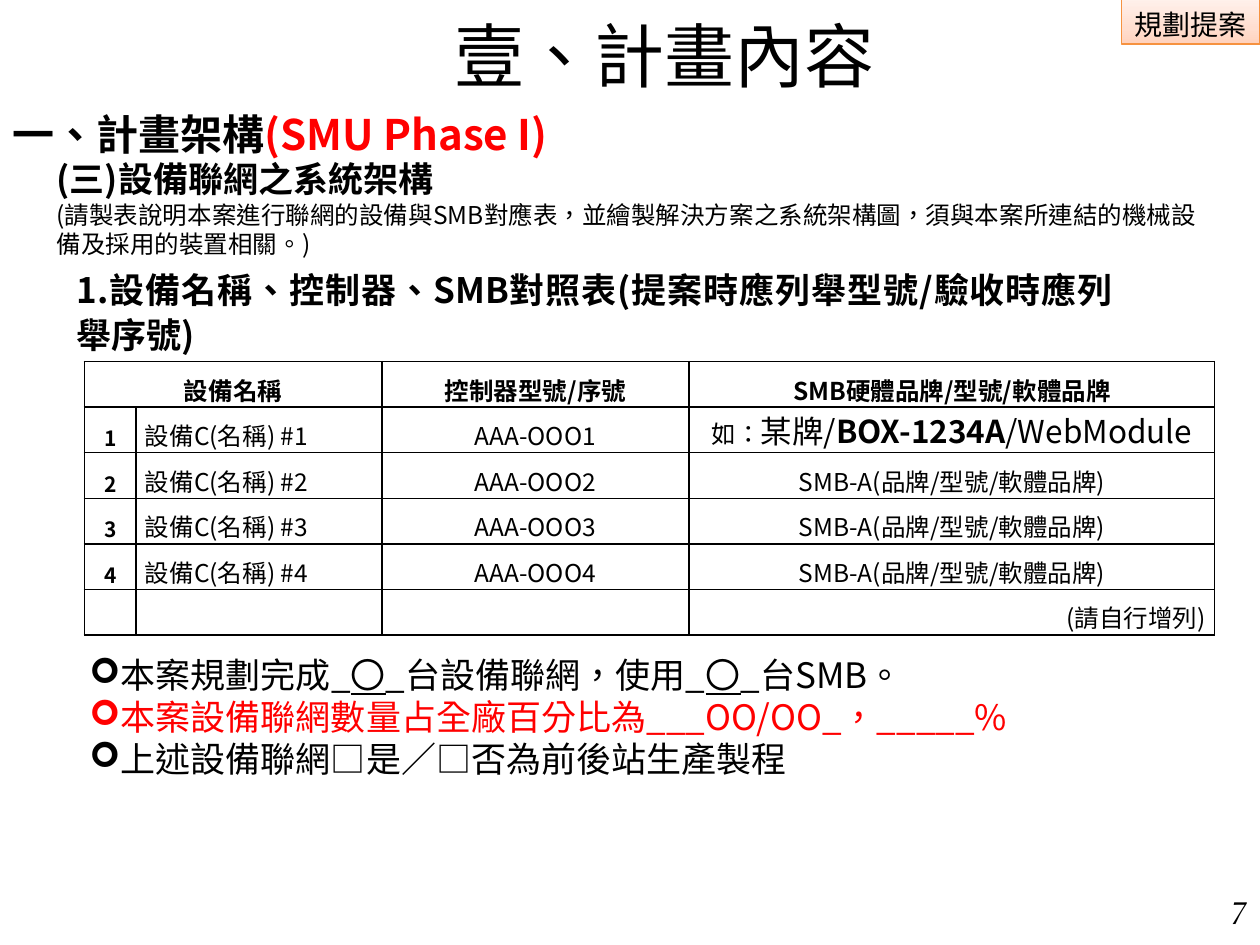
from copy import deepcopy
from dataclasses import dataclass
from typing import Optional

from lxml import etree
from pptx import Presentation
from pptx import util as u
from pptx.dml.color import RGBColor
from pptx.enum import shapes, text
from pptx.oxml.ns import qn

COLORS = {
    "ink": "000000",
    "alert": "FF0000",
    "tag_line": "F69240",
    "tag_dark": "FFD2BD",
    "tag_middle": "FFDED0",
    "tag_light": "FFF2ED",
}
SANS = "Noto Sans CJK SC"
SERIF = "TeX Gyre Pagella"
LEADING = 1.2
TABLE_LEADING = 26
LEFT, CENTER, RIGHT, JUSTIFY = (
    text.PP_ALIGN.LEFT, text.PP_ALIGN.CENTER, text.PP_ALIGN.RIGHT, text.PP_ALIGN.JUSTIFY)


@dataclass
class Run:
    words: str
    size: float = 14
    bold: bool = False
    color: str = "ink"
    underline: bool = False
    italic: bool = False
    font: str = SANS


@dataclass
class Line:
    runs: list[Run]
    align: text.PP_ALIGN = LEFT
    leading: Optional[float] = None
    bullet: Optional[str] = None
    indent: float = 0


@dataclass
class Box:
    left: float
    top: float
    width: float
    height: float
    lines: list[Line]


def rgb(name: str) -> RGBColor:
    return RGBColor.from_string(COLORS[name])


def add_run(paragraph, item: Run) -> None:
    run = paragraph.add_run()
    run.text = item.words
    font = run.font
    font.size = u.Pt(item.size)
    font.bold = item.bold
    font.italic = item.italic
    font.underline = item.underline
    font.color.rgb = rgb(item.color)
    font.name = item.font
    properties = run._r.get_or_add_rPr()
    properties.set("lang", "zh-TW")
    properties.find(qn("a:latin")).addnext(
        etree.Element(qn("a:ea"), typeface=item.font))


def write(frame, lines: list[Line]) -> None:
    for index, line in enumerate(lines):
        paragraph = frame.paragraphs[0] if index == 0 else frame.add_paragraph()
        properties = paragraph._p.get_or_add_pPr()
        properties.set("marL", str(u.Inches(line.indent)))
        properties.set("indent", "0")
        if line.bullet:
            etree.SubElement(properties, qn("a:buFont"), typeface="Wingdings")
            etree.SubElement(properties, qn("a:buChar"), char=line.bullet)
        paragraph.alignment = line.align
        paragraph.space_before = u.Pt(0)
        size = max((run.size for run in line.runs), default=14)
        paragraph.line_spacing = u.Pt(line.leading or round(size * LEADING, 1))
        for run in line.runs:
            add_run(paragraph, run)


def fill_box(shape, box: Box, anchor=text.MSO_ANCHOR.TOP, inset: float = 0.08) -> None:
    shape.left, shape.top = u.Inches(box.left), u.Inches(box.top)
    shape.width, shape.height = u.Inches(box.width), u.Inches(box.height)
    frame = shape.text_frame
    frame.word_wrap = True
    frame.auto_size = text.MSO_AUTO_SIZE.NONE
    frame.vertical_anchor = anchor
    frame.margin_left = frame.margin_right = u.Inches(0.1)
    frame.margin_top, frame.margin_bottom = u.Inches(inset), u.Inches(0.05)
    write(frame, box.lines)


def add_text(slide, box: Box, **options) -> None:
    fill_box(slide.shapes.add_textbox(0, 0, 0, 0), box, **options)


def add_tag(slide, box: Box) -> None:
    tag = slide.shapes.add_shape(shapes.MSO_SHAPE.RECTANGLE, 0, 0, 0, 0)
    fill_box(tag, box)
    tag.text_frame.word_wrap = False
    tag.shadow.inherit = False
    tag.line.color.rgb = rgb("tag_line")
    tag.line.width = u.Pt(0.75)
    tag.fill.gradient()
    tag.fill.gradient_angle = 90
    first_stop = tag._element.spPr.find(".//" + qn("a:gs"))
    first_stop.addnext(deepcopy(first_stop))
    shades = [(0, "tag_dark"), (0.35, "tag_middle"), (1, "tag_light")]
    for stop, (position, color) in zip(tag.fill.gradient_stops, shades):
        stop.position = position
        stop.color.rgb = rgb(color)


def set_borders(cell) -> None:
    properties = cell._tc.get_or_add_tcPr()
    for index, side in enumerate(("lnL", "lnR", "lnT", "lnB")):
        border = etree.Element(qn(f"a:{side}"), w=str(u.Pt(1)))
        solid = etree.SubElement(border, qn("a:solidFill"))
        etree.SubElement(solid, qn("a:srgbClr"), val=COLORS["ink"])
        properties.insert(index, border)


def add_equipment_table(slide, rows: list[list[Line]]) -> None:
    widths = [0.41, 1.95, 2.44, 4.17]
    row_height = u.Pt(TABLE_LEADING)
    table = slide.shapes.add_table(
        len(rows), len(widths), u.Inches(0.67), u.Inches(2.87),
        u.Inches(sum(widths)), row_height * len(rows)).table
    table.first_row = table.horz_banding = False
    for column, width in zip(table.columns, widths):
        column.width = u.Inches(width)
    for row, lines in zip(table.rows, rows):
        row.height = row_height
        for cell, line in zip(row.cells, lines):
            cell.margin_left = cell.margin_right = u.Inches(0.07)
            cell.margin_top = cell.margin_bottom = 0
            cell.vertical_anchor = text.MSO_ANCHOR.MIDDLE
            cell.fill.background()
            set_borders(cell)
            line.leading = TABLE_LEADING
            write(cell.text_frame, [line])
    table.cell(0, 0).merge(table.cell(0, 1))


def equipment_rows() -> list[list[Line]]:
    header = [Line([Run(words, bold=True)] if words else [], CENTER) for words in
              ("設備名稱", "", "控制器型號/序號", "SMB硬體品牌/型號/軟體品牌")]
    example = [Run("如："), Run("某牌/", 18), Run("BOX-1234A", 18, bold=True),
               Run("/WebModule", 18)]
    rows = [header]
    for number in range(1, 5):
        box_runs = example if number == 1 else [Run("SMB-A(品牌/型號/軟體品牌)")]
        rows.append([
            Line([Run(str(number), 12, bold=True)], CENTER),
            Line([Run(f"設備C(名稱) #{number}")]),
            Line([Run(f"AAA-OOO{number}")], CENTER),
            Line(box_runs, CENTER),
        ])
    rows.append([Line([]), Line([]), Line([]), Line([Run("(請自行增列)")], RIGHT)])
    return rows


def main() -> None:
    presentation = Presentation()
    presentation.slide_width, presentation.slide_height = u.Inches(10), u.Inches(7.5)
    slide = presentation.slides.add_slide(presentation.slide_layouts[1])

    add_tag(slide, Box(8.9, -0.02, 1.1, 0.37, [Line([Run("規劃提案", 16)], CENTER)]))
    fill_box(slide.shapes.title, Box(
        1.93, 0, 6.69, 0.68, [Line([Run("壹、計畫內容", 40)], CENTER)]), inset=0.1)
    add_text(slide, Box(0, 0.78, 9.25, 0.51, [Line([
        Run("一、計畫架構", 24, bold=True),
        Run("(SMU Phase I)", 24, bold=True, color="alert")])]))
    add_text(slide, Box(0.35, 1.17, 9.25, 0.91, [
        Line([Run("(三)設備聯網之系統架構", 20, bold=True)]),
        Line([Run("(請製表說明本案進行聯網的設備與SMB對應表，並繪製解決方案之系統架構圖，"
                  "須與本案所連結的機械設備及採用的裝置相關。)")])]))
    add_text(slide, Box(-0.67, 2.02, 9.6, 0.83, [Line(
        [Run("1.設備名稱、控制器、SMB對照表(提案時應列舉型號/驗收時應列舉序號)", 20, bold=True)],
        JUSTIFY, TABLE_LEADING, indent=1.18)]))
    add_equipment_table(slide, equipment_rows())

    blank = Run("〇", 20, underline=True)
    summary = [
        [Run("本案規劃完成_", 20), blank, Run("_台設備聯網，使用_", 20), blank,
         Run("_台SMB。", 20)],
        [Run("本案設備聯網數量占全廠百分比為___OO/OO_，_____%", 20, color="alert")],
        [Run("上述設備聯網□是／□否為前後站生產製程", 20)],
    ]
    fill_box(slide.placeholders[1], Box(
        0.61, 5.11, 8.74, 1.11, [Line(runs, bullet="➢") for runs in summary]))
    add_text(slide, Box(9.14, 7.11, 0.86, 0.39, [Line(
        [Run("7", 18, italic=True, font=SERIF)], RIGHT, 12)]),
        anchor=text.MSO_ANCHOR.MIDDLE, inset=0.05)
    presentation.save("out.pptx")


if __name__ == "__main__":
    main()
